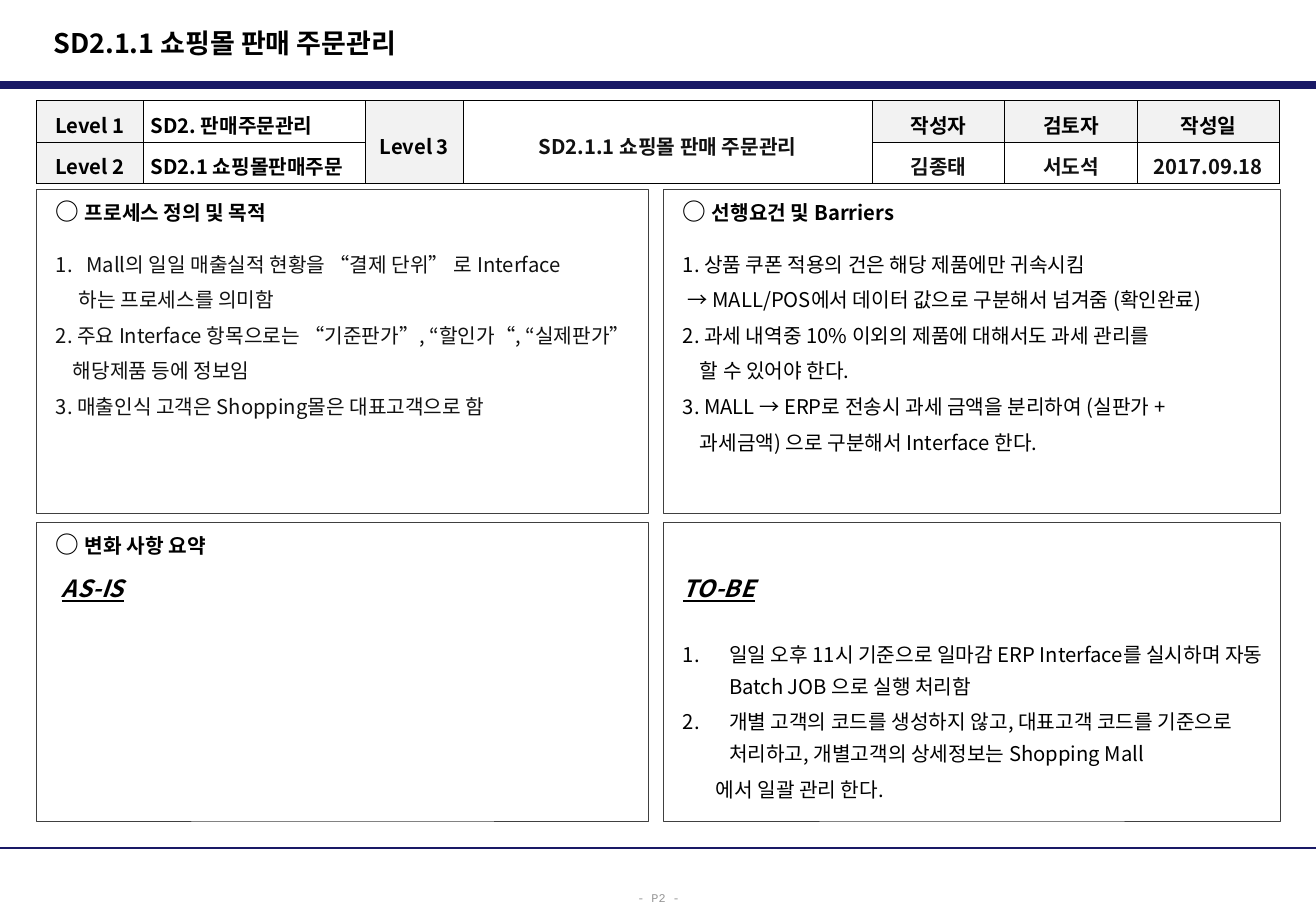
from lxml.etree import SubElement as Sub
from pptx import Presentation
from pptx.dml.color import RGBColor as Rgb
from pptx.enum.shapes import MSO_CONNECTOR as Conn, MSO_SHAPE as Kind
from pptx.enum.text import MSO_ANCHOR as Anchor, PP_ALIGN as Align
from pptx.oxml.ns import qn
from pptx.util import Inches as In, Pt

FACE = "Noto Sans CJK KR"
NAVY, GRAY, BLACK, INK = "191966", "F2F2F2", "000000", "111111"
WIDE, HIGH = 10.83, 7.5
LEFT, GAP = 0.3, 0.12

TITLE = "SD2.1.1 쇼핑몰 판매 주문관리"
PAGE = "- P2 -"
RULES = [(0.7, 4.5), (6.98, 1.5)]  # top, weight

COLS = [0.88, 1.83, 0.8, 3.37, 1.09, 1.09, 1.17]
ROW = 0.34
GRID = [
    ["Level 1", "SD2. 판매주문관리", "Level 3", TITLE, "작성자", "검토자", "작성일"],
    ["Level 2", "SD2.1 쇼핑몰판매주문", None, None, "김종태", "서도석", "2017.09.18"],
]
SHADED = {(0, 0), (1, 0), (0, 2), (0, 4), (0, 5), (0, 6)}
DARK = {(0, 3), (1, 4), (1, 5), (1, 6)}

# Panel lines: style, text, left indent, number hang
PANELS = [
    [
        ("head", "프로세스 정의 및 목적", 0, 0),
        ("first", "Mall의 일일 매출실적 현황을 “결제 단위” 로 Interface", 0.25, 0.25),
        ("item", "하는 프로세스를 의미함", 0.19, 0),
        ("item", "2. 주요 Interface 항목으로는 “기준판가”, “할인가“, “실제판가”", 0, 0),
        ("item", "해당제품 등에 정보임", 0.14, 0),
        ("item", "3. 매출인식 고객은 Shopping몰은 대표고객으로 함", 0, 0),
    ],
    [
        ("head", "선행요건 및 Barriers", 0, 0),
        ("first", "1. 상품 쿠폰 적용의 건은 해당 제품에만 귀속시킴", 0, 0),
        ("item", "→ MALL/POS에서 데이터 값으로 구분해서 넘겨줌 (확인완료)", 0.04, 0),
        ("item", "2. 과세 내역중 10% 이외의 제품에 대해서도 과세 관리를", 0, 0),
        ("item", "할 수 있어야 한다.", 0.14, 0),
        ("item", "3. MALL → ERP로 전송시 과세 금액을 분리하여 (실판가 +", 0, 0),
        ("item", "과세금액) 으로 구분해서 Interface 한다.", 0.14, 0),
    ],
    [
        ("head", "변화 사항 요약", 0, 0),
        ("state", "AS-IS", 0.05, 0),
    ],
    [
        ("state", "TO-BE", 0, 0),
        ("after", "일일 오후 11시 기준으로 일마감 ERP Interface를 실시하며 "
                  "자동 Batch JOB 으로 실행 처리함", 0.38, 0.38),
        ("item", "개별 고객의 코드를 생성하지 않고, 대표고객 코드를 기준으로 "
                 "처리하고, 개별고객의 상세정보는 Shopping Mall", 0.38, 0.38),
        ("item", "에서 일괄 관리 한다.", 0.27, 0),
    ],
]
TOPS, TALL = (1.56, 4.3), (2.67, 2.46)
BROAD = (5.04, 5.08)
LOW = 0.42  # top inset that sets TO-BE level with AS-IS

HEAD = {"size": Pt(12), "bold": True}
BODY = {"size": Pt(12), "bold": False}
STATE = {"size": Pt(14), "bold": True, "italic": True, "underline": True}
STYLES = {  # font, line pitch, space before
    "head": (HEAD, 17.5, 0),
    "state": (STATE, 17, 9.3),
    "first": (BODY, 19, 11.4),
    "after": (BODY, 19, 19.1),
    "item": (BODY, 19, 2.1),
}


def rgb(code):
    return Rgb.from_string(code)


def assign(obj, vals):
    for key, val in vals.items():
        setattr(obj, key, val)


def write(para, text, form, color=BLACK, face=FACE):
    run = para.add_run()
    run.text = text
    assign(run.font, {"name": face, **form})
    run.font.color.rgb = rgb(color)
    Sub(run.font._element, qn("a:ea")).set("typeface", face)


def inset(obj, left, top, right, base):
    sides = {"left": left, "top": top, "right": right, "bottom": base}
    assign(obj, {f"margin_{k}": In(v) for k, v in sides.items()})


def rule(slide, top, weight):
    line = slide.shapes.add_connector(Conn.STRAIGHT, 0, In(top), In(WIDE), In(top))
    line.line.color.rgb = rgb(NAVY)
    line.line.width = Pt(weight)
    Sub(line._element.spPr, qn("a:effectLst"))


def panel(slide, spot, lines):
    row, col = divmod(spot, 2)
    left = LEFT + col * (BROAD[0] + GAP)
    box = slide.shapes.add_shape(
        Kind.RECTANGLE, In(left), In(TOPS[row]), In(BROAD[col]), In(TALL[row]))
    box.shadow.inherit = False
    box.fill.background()
    box.line.color.rgb = rgb("404040")
    box.line.width = Pt(0.5)
    frame = box.text_frame
    frame.word_wrap = True
    frame.vertical_anchor = Anchor.TOP
    inset(frame, 0.16, LOW if lines[0][0] == "state" else 0.05, 0.04, 0.05)
    for num, (style, text, indent, hang) in enumerate(lines):
        para = frame.add_paragraph() if num else frame.paragraphs[0]
        form, pitch, space = STYLES[style]
        props = para._p.get_or_add_pPr()
        props.set("marL", str(In(indent)))
        props.set("indent", str(-In(hang)))
        if hang:
            Sub(props, qn("a:buFont")).set("typeface", FACE)
            Sub(props, qn("a:buAutoNum")).set("type", "arabicPeriod")
        assign(para, {"alignment": Align.LEFT, "line_spacing": Pt(pitch),
                      "space_before": Pt(space if num else 0)})
        if style == "head":
            write(para, "○ ", {**form, "size": Pt(14)})
        write(para, text, form, INK if spot == 0 and num else BLACK)


def border(cell):
    props = cell._tc.get_or_add_tcPr()
    for side in ("lnL", "lnR", "lnT", "lnB"):
        line = Sub(props, qn(f"a:{side}"), w=str(Pt(0.5)))
        Sub(Sub(line, qn("a:solidFill")), qn("a:srgbClr")).set("val", BLACK)


def table(slide):
    grid = slide.shapes.add_table(
        len(GRID), len(COLS), In(LEFT), In(0.83), In(sum(COLS)), In(ROW * 2)).table
    assign(grid, {"first_row": False, "horz_banding": False})
    for col, width in zip(grid.columns, COLS):
        col.width = In(width)
    for r, texts in enumerate(GRID):
        grid.rows[r].height = In(ROW)
        for c, text in enumerate(texts):
            cell = grid.cell(r, c)
            border(cell)
            if (r, c) in SHADED:
                cell.fill.solid()
                cell.fill.fore_color.rgb = rgb(GRAY)
            else:
                cell.fill.background()
            inset(cell, 0.06, 0.01, 0.06, 0.01)
            cell.vertical_anchor = Anchor.MIDDLE
            if text:
                para = cell.text_frame.paragraphs[0]
                assign(para, {"alignment": Align.LEFT if c == 1 else Align.CENTER,
                              "line_spacing": Pt(21.5)})
                write(para, text, HEAD, INK if (r, c) in DARK else BLACK)
    for c in (2, 3):
        grid.cell(0, c).merge(grid.cell(1, c))


def main():
    deck = Presentation()
    assign(deck, {"slide_width": In(WIDE), "slide_height": In(HIGH)})
    slide = deck.slides.add_slide(deck.slide_layouts[5])
    for top, weight in RULES:
        rule(slide, top, weight)

    head = slide.shapes.title
    assign(head, {"left": In(0.34), "top": In(0.16),
                  "width": In(7.11), "height": In(0.38)})
    head.text_frame.vertical_anchor = Anchor.MIDDLE
    para = head.text_frame.paragraphs[0]
    para.alignment = Align.LEFT
    write(para, TITLE, {"size": Pt(16), "bold": True})

    table(slide)
    for spot, lines in enumerate(PANELS):
        panel(slide, spot, lines)

    foot = slide.shapes.add_textbox(In(5.14), In(7.25), In(0.56), In(0.25))
    foot.text_frame.word_wrap = False
    para = foot.text_frame.paragraphs[0]
    assign(para, {"alignment": Align.CENTER, "line_spacing": 1.3})
    write(para, PAGE, {"size": Pt(7)}, "969696", "Courier New")
    deck.save("out.pptx")


if __name__ == "__main__":
    main()
